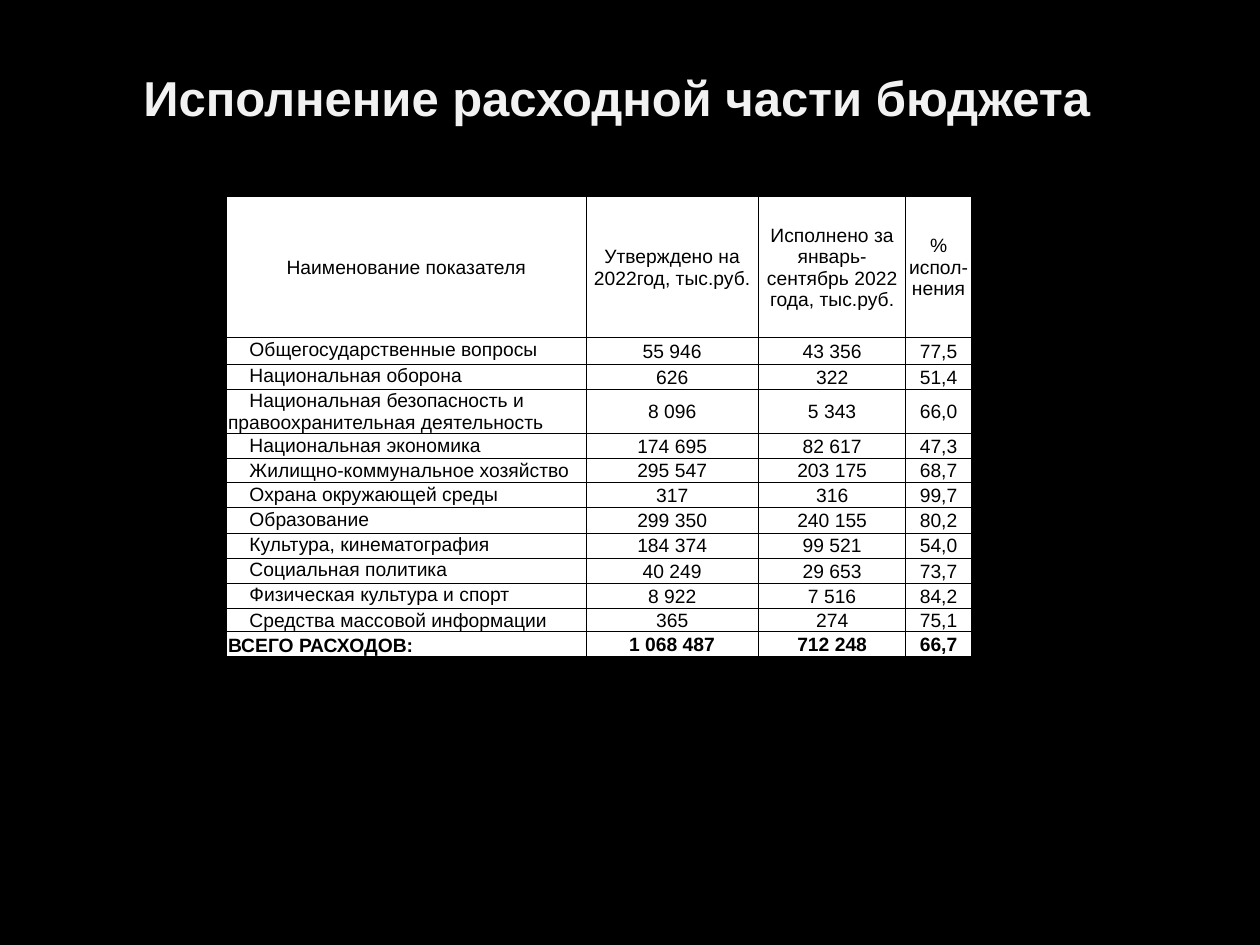
from lxml import etree
from pptx import Presentation
from pptx.dml.color import RGBColor
from pptx.enum.text import MSO_ANCHOR, PP_ALIGN
from pptx.oxml.ns import qn
from pptx.util import Inches, Pt

LEFT, CENTER = PP_ALIGN.LEFT, PP_ALIGN.CENTER
TOP, MIDDLE, BOTTOM = MSO_ANCHOR.TOP, MSO_ANCHOR.MIDDLE, MSO_ANCHOR.BOTTOM
COLORS = {"background": "000000", "title": "F2F2F2", "cell": "FFFFFF",
          "text": "000000", "border": "000000"}

HEADER = ["Наименование показателя", "Утверждено на 2022год, тыс.руб.",
          "Исполнено за январь-сентябрь 2022 года, тыс.руб.", "% испол-нения"]
EXPENSES = [
    ["Общегосударственные вопросы", "55 946", "43 356", "77,5"],
    ["Национальная оборона", "626", "322", "51,4"],
    ["Национальная безопасность и правоохранительная деятельность",
     "8 096", "5 343", "66,0"],
    ["Национальная экономика", "174 695", "82 617", "47,3"],
    ["Жилищно-коммунальное хозяйство", "295 547", "203 175", "68,7"],
    ["Охрана окружающей среды", "317", "316", "99,7"],
    ["Образование", "299 350", "240 155", "80,2"],
    ["Культура, кинематография", "184 374", "99 521", "54,0"],
    ["Социальная политика", "40 249", "29 653", "73,7"],
    ["Физическая культура и спорт", "8 922", "7 516", "84,2"],
    ["Средства массовой информации", "365", "274", "75,1"],
]
TOTAL = ["ВСЕГО РАСХОДОВ:", "1 068 487", "712 248", "66,7"]
COLUMN_WIDTHS = [2.85, 1.37, 1.17, 0.52]
ROW_HEIGHTS = [1.12, 0.21, 0.2, 0.35, 0.2, 0.19] + [0.2] * 5 + [0.15, 0.2]


class SlideBuilder:
    """Holds the style and the current slide."""

    def __init__(self, slide, font="Arial"):
        self.slide = slide
        self.font = font

    def background(self, color):
        fill = self.slide.background.fill
        fill.solid()
        fill.fore_color.rgb = RGBColor.from_string(COLORS[color])

    def format(self, para, size, color, align, bold=False):
        para.alignment = align
        para.font.name = self.font
        para.font.size = Pt(size)
        para.font.bold = bold
        para.font.color.rgb = RGBColor.from_string(COLORS[color])

    def title(self, text, left, top, width, height):
        box = self.slide.shapes.title
        box.left, box.top = Inches(left), Inches(top)
        box.width, box.height = Inches(width), Inches(height)
        frame = box.text_frame
        frame.text = text
        frame.vertical_anchor = MIDDLE
        frame.margin_right = Inches(0.31)
        self.format(frame.paragraphs[0], 28, "title", CENTER, bold=True)

    def table(self, rows, left, top, widths, heights):
        table = self.slide.shapes.add_table(
            len(rows), len(widths), Inches(left), Inches(top),
            Inches(sum(widths)), Inches(sum(heights))).table
        table.first_row = table.horz_banding = False
        for column, width in zip(table.columns, widths):
            column.width = Inches(width)
        for row, height in zip(table.rows, heights):
            row.height = Inches(height)
        last = len(rows) - 1
        for r, values in enumerate(rows):
            for c, text in enumerate(values):
                is_name = c == 0 and r > 0
                anchor = MIDDLE
                if is_name:
                    anchor = BOTTOM if r == last else TOP
                self.cell(table.cell(r, c), text, anchor,
                          LEFT if is_name else CENTER, bold=r == last,
                          indent=0.17 if is_name and r < last else 0)

    def cell(self, cell, text, anchor, align, bold, indent):
        cell.text = text
        cell.vertical_anchor = anchor
        cell.margin_left = cell.margin_right = cell.margin_top = Inches(0.01)
        cell.margin_bottom = 0
        para = cell.text_frame.paragraphs[0]
        self.format(para, 11, "text", align, bold)
        if indent:
            # First-line indent
            para._p.get_or_add_pPr().set("indent", str(Inches(indent)))
        self.borders(cell)
        cell.fill.solid()
        cell.fill.fore_color.rgb = RGBColor.from_string(COLORS["cell"])

    def borders(self, cell):
        properties = cell._tc.get_or_add_tcPr()
        for side in ("a:lnL", "a:lnR", "a:lnT", "a:lnB"):
            line = etree.SubElement(properties, qn(side), w=str(Pt(0.5)))
            fill = etree.SubElement(line, qn("a:solidFill"))
            etree.SubElement(fill, qn("a:srgbClr"), val=COLORS["border"])


def main():
    deck = Presentation()
    deck.slide_width, deck.slide_height = Inches(10), Inches(7.5)
    page = SlideBuilder(deck.slides.add_slide(deck.slide_layouts[5]))

    # Background and title
    page.background("background")
    page.title("Исполнение расходной части бюджета", 0.5, 0.29, 9, 0.96)

    # Budget expenses
    page.table([HEADER, *EXPENSES, TOTAL], 1.8, 1.56,
               COLUMN_WIDTHS, ROW_HEIGHTS)

    deck.save("out.pptx")


if __name__ == "__main__":
    main()
